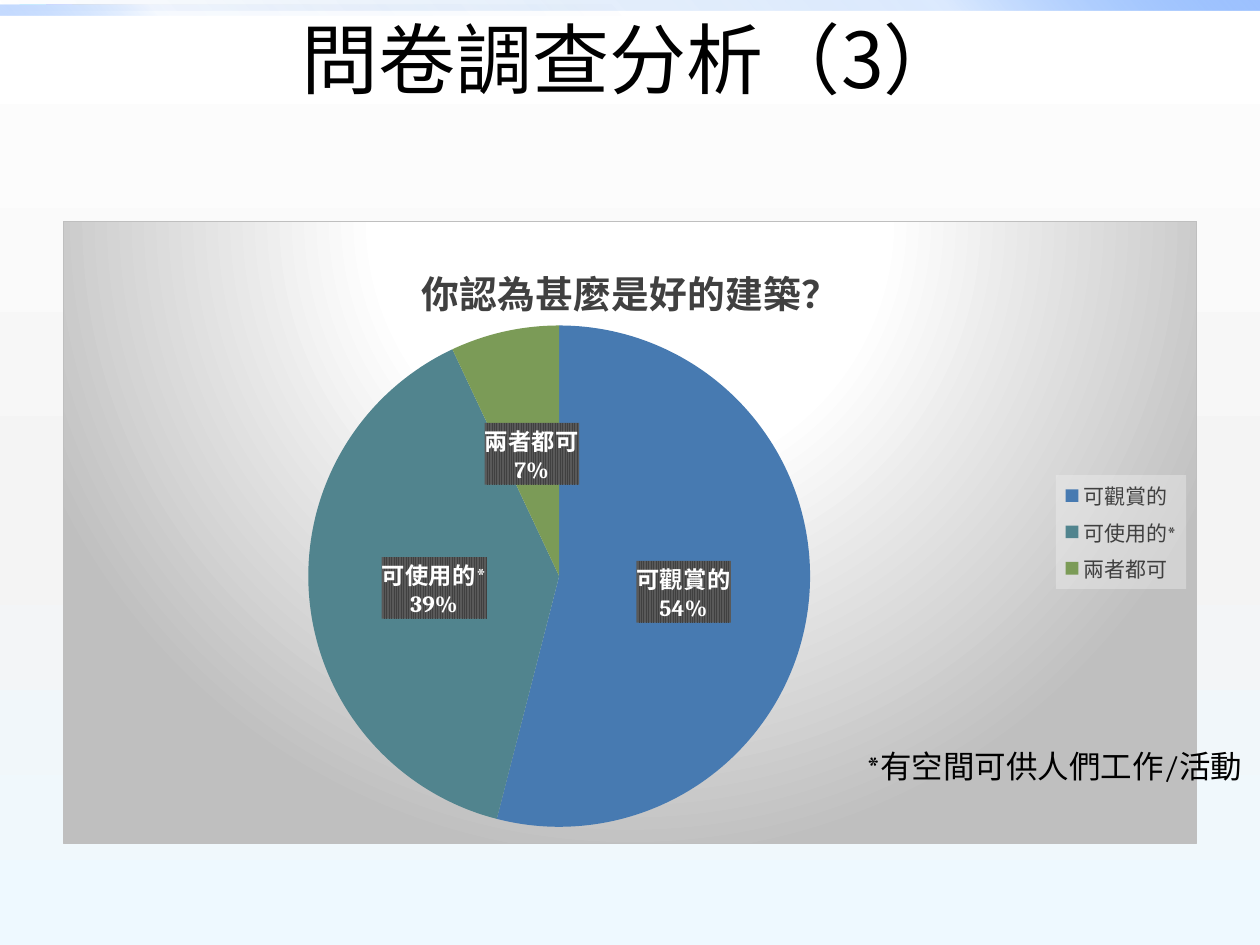
from typing import NamedTuple, Optional

import lxml.etree
import pptx
import pptx.chart.data
import pptx.dml.color
import pptx.enum.chart
import pptx.enum.text
import pptx.oxml
import pptx.oxml.ns
import pptx.util

Inches = pptx.util.Inches
Pt = pptx.util.Pt
qn = pptx.oxml.ns.qn
NAMESPACES = pptx.oxml.ns.nsdecls("a", "c")
LATIN = "Cambria"
CJK = "Noto Sans CJK SC"


class Stop(NamedTuple):
    position: int
    color: str
    alpha: int = 100


class Bar(NamedTuple):
    top: float
    width: float
    angle: int
    stops: list[Stop]


class Caption(NamedTuple):
    text: str
    left: float
    top: float
    width: float
    height: float
    size: int
    font: str
    centred: bool = False


class Slice(NamedTuple):
    label: str
    value: int
    color: str


BACKGROUND = [Stop(0, "FFFFFF"), Stop(55, "F4F4F4"), Stop(100, "EEF9FF")]
BARS = [
    Bar(0, 10, 315, [Stop(0, "0058B7", 0), Stop(75, "4F95FF", 20), Stop(100, "9EC2FF")]),
    Bar(0.04, 5, 135, [Stop(0, "0058B7", 0), Stop(75, "4F95FF", 5), Stop(100, "9EC2FF", 60)]),
]
HEADING = Caption("問卷調查分析（3）", 0.51, 0, 9, 0.92, 44, CJK, True)
FOOTNOTE = Caption("*有空間可供人們工作/活動", 6.78, 5.88, 3.21, 0.4, 18, LATIN)
QUESTION = "你認為甚麼是好的建築？"
SLICES = [
    Slice("可觀賞的", 54, "477AB1"),
    Slice("可使用的*", 39, "51848E"),
    Slice("兩者都可", 7, "7B9B57"),
]
CHART_STOPS = [Stop(0, "FFFFFF"), Stop(39, "FFFFFF"), Stop(100, "BFBFBF")]


def rgb(color: str) -> pptx.dml.color.RGBColor:
    return pptx.dml.color.RGBColor.from_string(color)


def solid_color(color: str, alpha: int = 100) -> str:
    return f'<a:srgbClr val="{color}"><a:alpha val="{alpha * 1000}"/></a:srgbClr>'


def gradient(stops: list[Stop], direction: str) -> str:
    marks = "".join(
        f'<a:gs pos="{stop.position * 1000}">{solid_color(stop.color, stop.alpha)}</a:gs>'
        for stop in stops
    )
    return f'<a:gradFill {NAMESPACES} rotWithShape="1"><a:gsLst>{marks}</a:gsLst>{direction}</a:gradFill>'


def linear(angle: int) -> str:
    return f'<a:lin ang="{angle * 60000}" scaled="0"/>'


def replace_gradient(fill, owner, stops: list[Stop], angle: int) -> None:
    fill.gradient()
    old = next(owner.iter(qn("a:gradFill")))
    old.getparent().replace(old, pptx.oxml.parse_xml(gradient(stops, linear(angle))))


def chart_shape_properties(content: str) -> lxml.etree._Element:
    return pptx.oxml.parse_xml(f"<c:spPr {NAMESPACES}>{content}</c:spPr>")


def chart_layout(left: float, top: float, size: Optional[tuple[float, float]] = None,
                 inner: bool = False) -> lxml.etree._Element:
    """Manual placement in fractions of the chart area."""
    target = '<c:layoutTarget val="inner"/>' if inner else ""
    extent = f'<c:w val="{size[0]}"/><c:h val="{size[1]}"/>' if size else ""
    return pptx.oxml.parse_xml(
        f'<c:layout {NAMESPACES}><c:manualLayout>{target}<c:xMode val="edge"/>'
        f'<c:yMode val="edge"/><c:x val="{left}"/><c:y val="{top}"/>{extent}'
        "</c:manualLayout></c:layout>"
    )


def drop_layout(parent) -> None:
    for layout in parent.findall(qn("c:layout")):
        parent.remove(layout)


def style_font(font, size: float, color: str, bold: bool = False, name: str = LATIN) -> None:
    font.size = Pt(size)
    font.bold = bold
    font.name = name
    font.color.rgb = rgb(color)


def add_bar(slide, bar: Bar) -> None:
    strip = slide.shapes.add_shape(
        pptx.enum.shapes.MSO_SHAPE.RECTANGLE,
        Inches(0), Inches(bar.top), Inches(bar.width), Inches(0.08))
    strip.shadow.inherit = False
    strip.line.fill.background()
    replace_gradient(strip.fill, strip._element, bar.stops, bar.angle)


def add_caption(slide, caption: Caption) -> None:
    box = slide.shapes.add_textbox(
        Inches(caption.left), Inches(caption.top), Inches(caption.width), Inches(caption.height))
    frame = box.text_frame
    frame.word_wrap = True
    frame.text = caption.text
    paragraph = frame.paragraphs[0]
    if caption.centred:
        frame.vertical_anchor = pptx.enum.text.MSO_ANCHOR.MIDDLE
        paragraph.alignment = pptx.enum.text.PP_ALIGN.CENTER
    run = paragraph.runs[0]
    style_font(run.font, caption.size, "000000", name=caption.font)
    east_asian = lxml.etree.SubElement(run.font._element, qn("a:ea"))
    east_asian.set("typeface", CJK)


def add_survey_chart(slide) -> None:
    answers = pptx.chart.data.CategoryChartData()
    answers.categories = [part.label for part in SLICES]
    answers.add_series("Series 1", [part.value for part in SLICES])
    chart = slide.shapes.add_chart(
        pptx.enum.chart.XL_CHART_TYPE.PIE,
        Inches(0.5), Inches(1.75), Inches(9), Inches(4.95), answers).chart
    style_font(chart.font, 10, "000000")

    # Chart area
    glow = gradient(CHART_STOPS, '<a:path path="circle"><a:fillToRect l="50000" t="-80000" '
                                 'r="50000" b="180000"/></a:path>')
    border = f'<a:ln w="9525"><a:solidFill>{solid_color("BFBFBF")}</a:solidFill></a:ln>'
    chart_root = chart._chartSpace.find(qn("c:chart"))
    chart_root.addnext(chart_shape_properties(glow + border))

    # Question
    title = chart.chart_title
    title.text_frame.text = QUESTION
    style_font(title.text_frame.paragraphs[0].runs[0].font, 21.6, "404040", True)
    drop_layout(title._element)
    title._element.find(qn("c:tx")).addnext(chart_layout(0.31, 0.05))

    # Slices
    plot = chart.plots[0]
    plot.vary_by_categories = True
    plot_area = chart_root.find(qn("c:plotArea"))
    drop_layout(plot_area)
    plot_area.insert(0, chart_layout(0.216, 0.167, (0.443, 0.807), True))
    for index, part in enumerate(SLICES):
        wedge = plot.series[0].points[index].format
        wedge.fill.solid()
        wedge.fill.fore_color.rgb = rgb(part.color)
        wedge.line.fill.background()

    # Slice labels
    labels = plot.series[0].data_labels
    labels.show_category_name = True
    labels.show_percentage = True
    labels.show_value = False
    labels.show_legend_key = False
    labels.number_format = "0%"
    labels.number_format_is_linked = False
    labels.position = pptx.enum.chart.XL_LABEL_POSITION.CENTER
    style_font(labels.font, 13.3, "FFFFFF", True)
    labels._element.find(qn("c:txPr")).addprevious(chart_shape_properties(
        f'<a:pattFill prst="narVert"><a:fgClr>{solid_color("404040")}</a:fgClr>'
        f'<a:bgClr>{solid_color("595959")}</a:bgClr></a:pattFill>'))

    # Legend
    chart.has_legend = True
    legend = chart.legend
    legend.position = pptx.enum.chart.XL_LEGEND_POSITION.RIGHT
    legend.include_in_layout = False
    style_font(legend.font, 12, "404040")
    drop_layout(legend._element)
    overlay = legend._element.find(qn("c:overlay"))
    overlay.addprevious(chart_layout(0.876, 0.408, (0.115, 0.183)))
    overlay.addnext(chart_shape_properties(
        f'<a:solidFill>{solid_color("F2F2F2", 39)}</a:solidFill>'))


def main() -> None:
    deck = pptx.Presentation()
    deck.slide_width, deck.slide_height = Inches(10), Inches(7.5)
    slide = deck.slides.add_slide(deck.slide_layouts[6])
    replace_gradient(slide.background.fill, slide._element, BACKGROUND, 90)
    for bar in BARS:
        add_bar(slide, bar)
    add_caption(slide, HEADING)
    add_survey_chart(slide)
    add_caption(slide, FOOTNOTE)
    deck.save("out.pptx")


if __name__ == "__main__":
    main()
